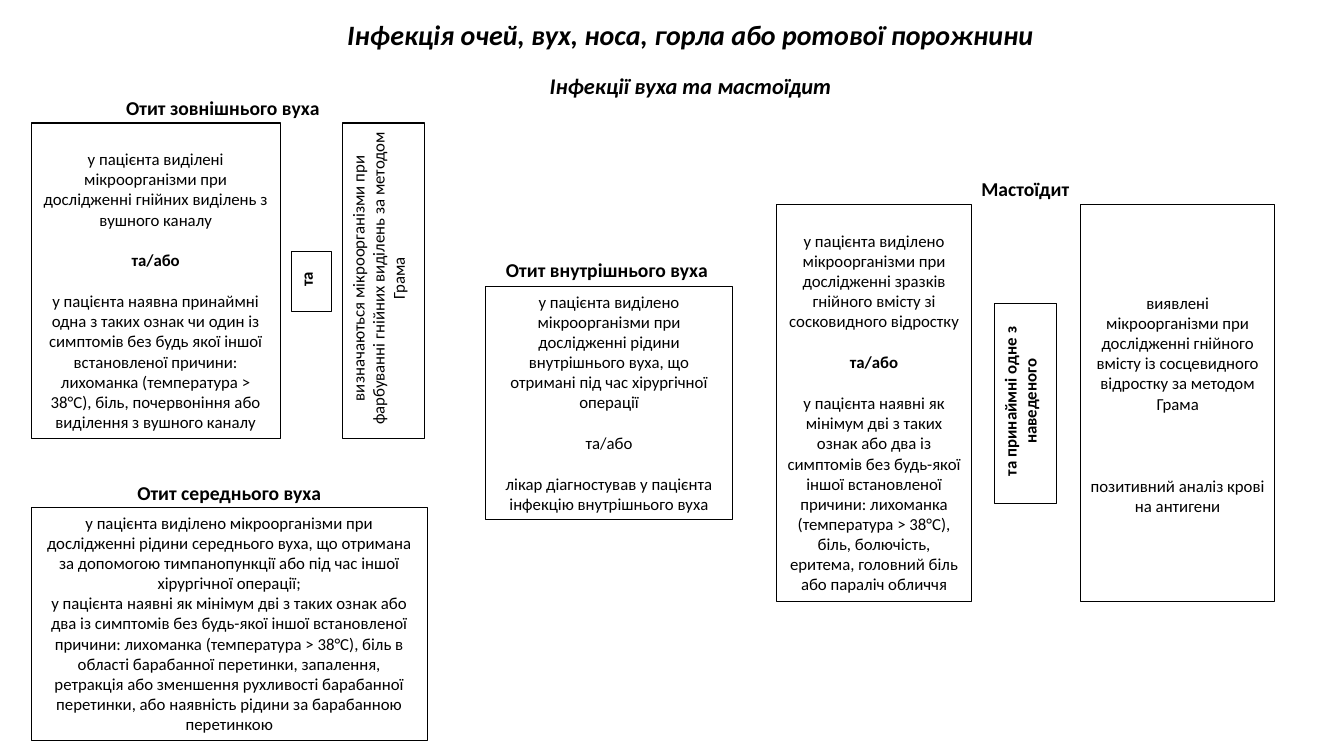
"""Build a slide of diagnostic criteria for ear infections and mastoiditis."""
from pptx import Presentation
from pptx.dml.color import RGBColor
from pptx.enum.shapes import MSO_SHAPE as Shape
from pptx.enum.text import MSO_ANCHOR as Anchor, PP_ALIGN as Align
from pptx.util import Cm, Pt

INK = "000000"
LINE_HEIGHT = 0.52
INSET = 0.13
TITLE = {"size": Pt(20), "bold": True, "italic": True}
SUBTITLE = {"size": Pt(16), "bold": True, "italic": True}
HEADING = {"size": Pt(14), "bold": True}
BODY = {"size": Pt(12), "bold": False}
STRONG = {"size": Pt(12), "bold": True}

LABELS = [
    ((4.75, 0.3, 25.3, 1.12), TITLE, "Інфекція очей, вух, носа, горла або ротової порожнини"),
    ((4.75, 1.68, 25.3, 0.94), SUBTITLE, "Інфекції вуха та мастоїдит"),
    ((0.63, 2.29, 9.98, 0.86), HEADING, "Отит зовнішнього вуха"),
    ((0.79, 11.99, 9.98, 0.86), HEADING, "Отит середнього вуха"),
    ((12.19, 6.38, 6.22, 0.86), HEADING, "Отит внутрішнього вуха"),
    ((20.85, 4.32, 9.98, 0.86), HEADING, "Мастоїдит"),
]

# Each paragraph: empty lines above it, format, text.
CRITERIA = [
    ((0.79, 3.1, 6.27, 7.95), [
        (1, BODY, "у пацієнта виділені мікроорганізми при дослідженні гнійних виділень з вушного каналу"),
        (1, STRONG, "та/або"),
        (1, BODY, "у пацієнта наявна принаймні одна з таких ознак чи один із симптомів без будь якої "
                  "іншої встановленої причини: лихоманка (температура > 38°С), біль, почервоніння "
                  "або виділення з вушного каналу"),
    ]),
    ((0.79, 12.78, 9.98, 5.89), [
        (0, BODY, "у пацієнта виділено мікроорганізми при дослідженні рідини середнього вуха, що отримана "
                  "за допомогою тимпанопункції або під час іншої хірургічної операції;"),
        (0, BODY, "у пацієнта наявні як мінімум дві з таких ознак або два із симптомів без будь-якої "
                  "іншої встановленої причини: лихоманка (температура > 38°С), біль в області барабанної "
                  "перетинки, запалення, ретракція або зменшення рухливості барабанної перетинки, "
                  "або наявність рідини за барабанною перетинкою"),
    ]),
    ((12.24, 7.21, 6.22, 5.89), [
        (0, BODY, "у пацієнта виділено мікроорганізми при дослідженні рідини внутрішнього вуха, "
                  "що отримані під час хірургічної операції"),
        (1, BODY, "та/або"),
        (1, BODY, "лікар діагностував у пацієнта інфекцію внутрішнього вуха"),
    ]),
    ((19.58, 5.16, 4.9, 10.01), [
        (1, BODY, "у пацієнта виділено мікроорганізми при дослідженні зразків гнійного вмісту "
                  "зі сосковидного відростку"),
        (1, STRONG, "та/або"),
        (1, BODY, "у пацієнта наявні як мінімум дві з таких ознак або два із симптомів без будь-якої "
                  "іншої встановленої причини: лихоманка (температура > 38°С), біль, болючість, еритема, "
                  "головний біль або параліч обличчя"),
    ]),
    ((27.23, 5.16, 4.9, 10.01), [
        (4, BODY, "виявлені мікроорганізми при дослідженні гнійного вмісту із сосцевидного відростку "
                  "за методом Грама"),
        (3, BODY, "позитивний аналіз крові на антигени"),
    ]),
]

UPRIGHT = [
    ((8.64, 3.1, 2.06, 7.95), BODY, "визначаються мікроорганізми при фарбуванні гнійних виділень за методом Грама"),
    ((7.34, 6.35, 1.02, 1.5), STRONG, "та"),
    ((25.07, 7.65, 1.55, 5.05), STRONG, "та принаймні одне з наведеного"),
]


def color(value):
    return RGBColor.from_string(value)


def write(box, paragraphs):
    frame = box.text_frame
    frame.word_wrap = True
    frame.vertical_anchor = Anchor.TOP
    for number, (gap, style, text) in enumerate(paragraphs):
        space = gap * LINE_HEIGHT
        if number == 0:
            para = frame.paragraphs[0]
            frame.margin_top = Cm(INSET + space)
        else:
            para = frame.add_paragraph()
            para.space_before = Cm(space)
        para.alignment = Align.CENTER
        span = para.add_run()
        span.text = text
        span.font.color.rgb = color(INK)
        for name, value in {"name": "Calibri", **style}.items():
            setattr(span.font, name, value)


def add_label(page, place, style, text):
    box = page.shapes.add_textbox(*map(Cm, place))
    write(box, [(0, style, text)])


def add_box(page, place, paragraphs):
    box = page.shapes.add_shape(Shape.RECTANGLE, *map(Cm, place))
    box.shadow.inherit = False
    box.fill.background()
    box.line.color.rgb = color(INK)
    box.line.width = Pt(0.75)
    write(box, paragraphs)
    return box


def main():
    deck = Presentation()
    deck.slide_width, deck.slide_height = Cm(33.87), Cm(19.05)
    page = deck.slides.add_slide(deck.slide_layouts[6])
    for place, paragraphs in CRITERIA:
        add_box(page, place, paragraphs)
    for place, style, text in UPRIGHT:
        box = add_box(page, place, [(0, style, text)])
        box.text_frame._txBody.bodyPr.set("vert", "vert270")
    for label in LABELS:
        add_label(page, *label)
    deck.save("out.pptx")


if __name__ == "__main__":
    main()
